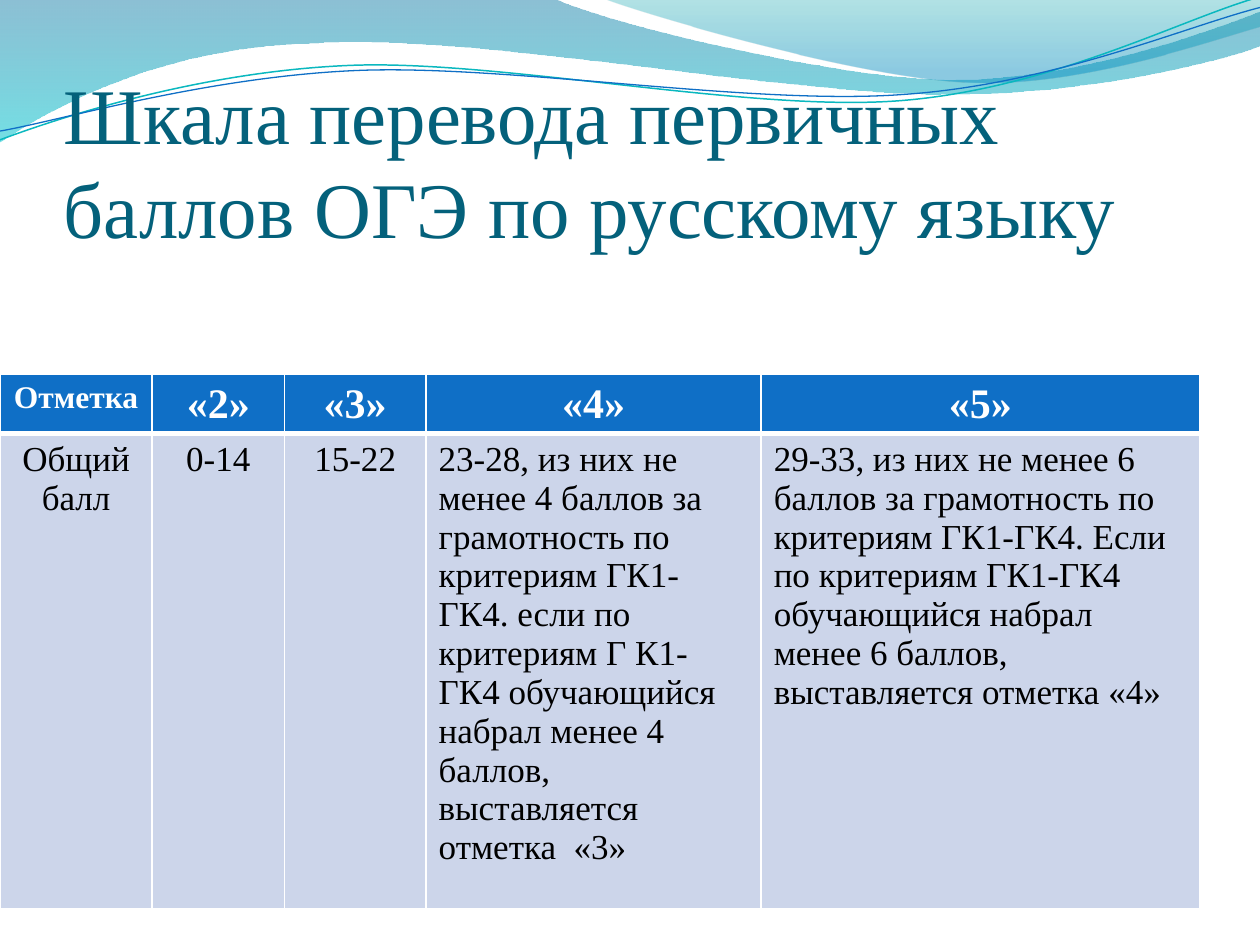
import math
from lxml import etree
from pptx import Presentation
from pptx import util as u
from pptx.dml.color import RGBColor
from pptx.enum import text
from pptx.oxml import ns

Pt = u.Pt
TITLE = "Шкала перевода первичных баллов ОГЭ по русскому языку"
ROWS = [
    ["Отметка ", "«2»", "«3»", "«4»", "«5»"],
    ["Общий балл", "0-14", "15-22",
     "23-28, из них не менее 4 баллов за грамотность по критериям ГК1-ГК4. "
     "если по критериям Г К1-ГК4 обучающийся набрал менее 4 баллов, "
     "выставляется отметка  «3»",
     "29-33, из них не менее 6 баллов за грамотность по критериям ГК1-ГК4. "
     "Если по критериям ГК1-ГК4 обучающийся набрал менее 6 баллов, "
     "выставляется отметка «4»"],
]
COL_WIDTHS = [87, 75.5, 81, 191.5, 250.5]
ROW_HEIGHTS = [33, 251.5]
BOTTOM_MARGINS = [1.5, 3.6]
CENTRED_COLS = 3

THEME = {
    "font": "Times New Roman", "title": "04617B", "header": "0F6FC6",
    "body": "CCD5EA", "white": "FFFFFF", "black": "000000",
    "title_size": 45, "label_size": 18, "mark_size": 24, "body_size": 20,
}

WAVES = [
    {"path": [(0, 0), (316.8, -0.7),
              (342.7, 12.2, 478.1, 45.4, 545.8, 45.4),
              (614.2, 45.4, 689.8, 18.7, 720, 6.5), (720.7, 25.9),
              (707.8, 31.7, 626.4, 54.7, 537.1, 54),
              (447.8, 54, 275, 20.2, 185, 24.5),
              (92.9, 25.9, 33.1, 59.8, -0.7, 81.4), (0, 0)],
     "stops": [(0, "0074A1", 45), (1, "00C6CF", 55)]},
    {"path": [(344.9, -0.7), (366.5, 7.9, 491, 44.6, 553.7, 46.8),
              (616.3, 49.7, 691.9, 23, 720, 15.1), (720, 0), (344.9, -0.7)],
     "stops": [(0, "00A1A9", 30), (0.8, "008BBF", 45)]},
    {"path": [(0, 79.9), (34.6, 67, 113.8, 41, 199.4, 37.4),
              (284.4, 33.8, 427, 64.1, 513.4, 57.6),
              (599.8, 51.1, 675.4, 10.8, 718.6, -1.4)],
     "line": ("0AB8BF", 0.85), "centre": (359.3, 41.4)},
    {"path": [(0, 74.9), (33.8, 69.1, 118.1, 43.9, 203.8, 40.3),
              (290.2, 36.7, 429.8, 60.5, 516.2, 54),
              (601.9, 48.2, 677.5, 15.1, 720, 4.3)],
     "line": ("0F6FC6", 0.75), "centre": (359.6, 42.5)},
]
TILT = -2.7


def rgb(value):
    return RGBColor.from_string(value)


def set_all(obj, **values):
    for name, value in values.items():
        setattr(obj, name, value)


def untilt(point, centre):
    angle = math.radians(-TILT)
    dx, dy = point[0] - centre[0], point[1] - centre[1]
    return (centre[0] + dx * math.cos(angle) - dy * math.sin(angle),
            centre[1] + dx * math.sin(angle) + dy * math.cos(angle))


def curve_segments(sp, path):
    lines = iter(list(sp._element.iter(ns.qn("a:lnTo"))))
    for seg in path[1:]:
        group = [next(lines) for _ in range(len(seg) // 2)]
        if len(group) == 3:
            curve = etree.Element(ns.qn("a:cubicBezTo"))
            group[0].addprevious(curve)
            for line in group:
                curve.append(line[0])
                line.getparent().remove(line)


def add_wave(s, wave):
    path = wave["path"]
    points = [seg[i:i + 2] for seg in path for i in range(0, len(seg), 2)]
    if "centre" in wave:
        points = [untilt(point, wave["centre"]) for point in points]
    points = [(Pt(x), Pt(y)) for x, y in points]
    fb = s.shapes.build_freeform(*points[0])
    fb.add_line_segments(points[1:], close="stops" in wave)
    sp = fb.convert_to_shape()
    curve_segments(sp, path)
    sp.shadow.inherit = False
    if "line" in wave:
        color, width = wave["line"]
        sp.rotation = TILT
        sp.fill.background()
        sp.line.color.rgb = rgb(color)
        sp.line.width = Pt(width)
        return
    sp.line.fill.background()
    sp.fill.gradient()
    sp.fill.gradient_angle = 270
    for stop, (position, color, _) in zip(sp.fill.gradient_stops, wave["stops"]):
        stop.position = position
        stop.color.rgb = rgb(color)
    for clr, (_, _, alpha) in zip(sp._element.spPr.iter(ns.qn("a:srgbClr")), wave["stops"]):
        etree.SubElement(clr, ns.qn("a:alpha"), val=str(alpha * 1000))


def write(tf, value, size, color, bold=False, align=text.PP_ALIGN.LEFT):
    p = tf.paragraphs[0]
    p.alignment = align
    r = p.add_run()
    r.text = value
    set_all(r.font, name=THEME["font"], size=Pt(size), bold=bold)
    r.font.color.rgb = rgb(color)


def add_borders(cell, bottom):
    tc_pr = cell._tc.get_or_add_tcPr()
    for i, (side, width) in enumerate([("L", 1), ("R", 1), ("T", 1), ("B", bottom)]):
        ln = etree.Element(ns.qn(f"a:ln{side}"), w=str(Pt(width)))
        fill = etree.SubElement(ln, ns.qn("a:solidFill"))
        etree.SubElement(fill, ns.qn("a:srgbClr"), val=THEME["white"])
        tc_pr.insert(i, ln)


def add_title(s):
    tf = s.shapes.add_textbox(Pt(36.4), Pt(55.5), Pt(648), Pt(90)).text_frame
    set_all(tf, word_wrap=True, vertical_anchor=text.MSO_ANCHOR.BOTTOM,
            margin_left=0, margin_right=0, margin_top=Pt(3.6), margin_bottom=0)
    write(tf, TITLE, THEME["title_size"], THEME["title"])


def add_scale(s):
    table = s.shapes.add_table(len(ROWS), len(COL_WIDTHS), 0, Pt(214),
                               Pt(sum(COL_WIDTHS)), Pt(sum(ROW_HEIGHTS))).table
    for col, width in zip(table.columns, COL_WIDTHS):
        col.width = Pt(width)
    for i, (row, height) in enumerate(zip(ROWS, ROW_HEIGHTS)):
        table.rows[i].height = Pt(height)
        header = i == 0
        for j, value in enumerate(row):
            cell = table.cell(i, j)
            cell.margin_bottom = Pt(BOTTOM_MARGINS[i])
            cell.fill.solid()
            cell.fill.fore_color.rgb = rgb(THEME["header" if header else "body"])
            add_borders(cell, 3 if header else 1)
            kind = "body" if not header else "mark" if j else "label"
            centred = header or j < CENTRED_COLS
            write(cell.text_frame, value, THEME[f"{kind}_size"],
                  THEME["white" if header else "black"], header,
                  text.PP_ALIGN.CENTER if centred else text.PP_ALIGN.LEFT)


def main():
    prs = Presentation()
    set_all(prs, slide_width=Pt(720), slide_height=Pt(540))
    s = prs.slides.add_slide(prs.slide_layouts[6])
    for wave in WAVES:
        add_wave(s, wave)
    add_title(s)
    add_scale(s)
    prs.save("out.pptx")


if __name__ == "__main__":
    main()
